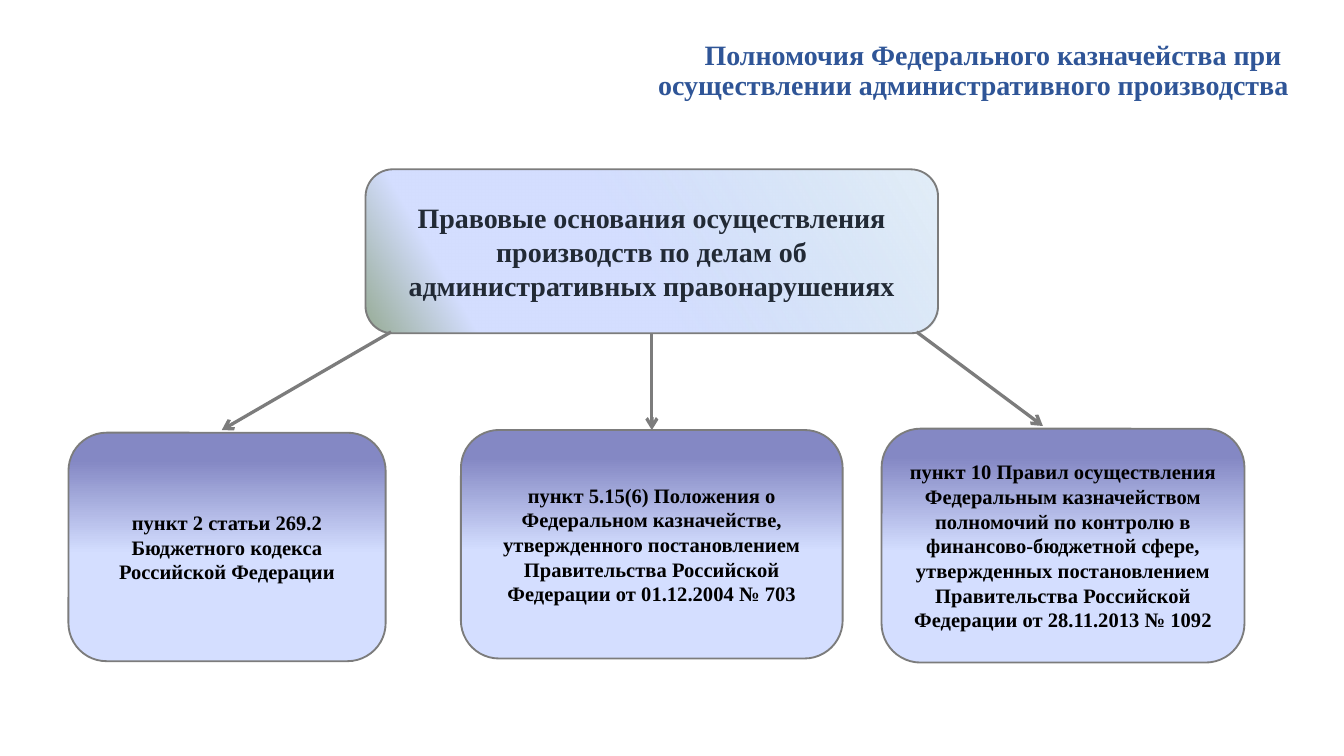
from lxml import etree
from pptx import Presentation
from pptx.dml.color import RGBColor
from pptx.enum.shapes import MSO_CONNECTOR, MSO_SHAPE
from pptx.enum.text import MSO_ANCHOR, PP_ALIGN
from pptx.oxml.ns import qn
from pptx.util import Inches, Pt

ROUND = MSO_SHAPE.ROUNDED_RECTANGLE
LINE = MSO_CONNECTOR.STRAIGHT
MIDDLE = MSO_ANCHOR.MIDDLE
CENTER, RIGHT = PP_ALIGN.CENTER, PP_ALIGN.RIGHT

BLUE = RGBColor(0x2F, 0x55, 0x97)
DARK = RGBColor(0x22, 0x2A, 0x35)
BLACK = RGBColor(0, 0, 0)
GRAY = RGBColor(0x7C, 0x7C, 0x7C)
SKY = RGBColor(0xBD, 0xD7, 0xEE)
PALE = RGBColor(0xD4, 0xDE, 0xFF)
SAGE = RGBColor(0x96, 0xAB, 0x94)
VIOLET = RGBColor(0x84, 0x88, 0xC4)

TITLE = ("Полномочия Федерального казначейства при \n"
         "осуществлении административного производства")
ROOT = ("Правовые основания осуществления производств по делам "
        "об административных правонарушениях")
BASES = [
    ("пункт 2 статьи 269.2 Бюджетного кодекса Российской Федерации",
     (0.51, 3.22, 2.36, 1.7)),
    ("пункт 5.15(6) Положения о Федеральном казначействе, утвержденного "
     "постановлением Правительства Российской Федерации от 01.12.2004 № 703",
     (3.43, 3.2, 2.84, 1.7)),
    ("пункт 10 Правил осуществления Федеральным казначейством полномочий "
     "по контролю в финансово-бюджетной сфере, утвержденных постановлением "
     "Правительства Российской Федерации от 28.11.2013 № 1092",
     (6.56, 3.19, 2.7, 1.74)),
]
ARROWS = [(2.91, 2.47, 1.65, 3.2), (4.85, 2.48, 4.85, 3.2),
          (6.82, 2.47, 7.76, 3.17)]
ROOT_FILL = (150, [(0, SKY, 42), (53, PALE, 100), (83, PALE, 100),
                   (100, SAGE, 100)])
BASE_FILL = (90, [(12, VIOLET, 100), (53, PALE, 100), (83, PALE, 100)])


def write(shape, text, size, color, align):
    frame = shape.text_frame
    looks = {"word_wrap": True, "vertical_anchor": MIDDLE,
             "margin_left": Inches(0.07), "margin_right": Inches(0.07),
             "margin_top": Inches(0.04), "margin_bottom": Inches(0.04)}
    for name, value in looks.items():
        setattr(frame, name, value)
    para = frame.paragraphs[0]
    para.text = text
    para.alignment = align
    for run in para.runs:
        font = run.font
        for name, value in {"name": "Times New Roman", "size": Pt(size),
                            "bold": True}.items():
            setattr(font, name, value)
        font.color.rgb = color
    return para


def shade(shape, angle, stops):
    shape.fill.gradient()
    grad = shape.fill._xPr.find(qn("a:gradFill"))
    for child in list(grad):
        grad.remove(child)
    group = etree.SubElement(grad, qn("a:gsLst"))
    for pos, color, alpha in stops:
        stop = etree.SubElement(group, qn("a:gs"), pos=str(pos * 1000))
        tint = etree.SubElement(stop, qn("a:srgbClr"), val=str(color))
        if alpha < 100:
            etree.SubElement(tint, qn("a:alpha"), val=str(alpha * 1000))
    etree.SubElement(grad, qn("a:lin"), ang=str(angle * 60000), scaled="0")


def add_box(slide, text, place, size, color, fill):
    box = slide.shapes.add_shape(ROUND, *map(Inches, place))
    box.shadow.inherit = False
    shade(box, *fill)
    box.line.color.rgb = GRAY
    box.line.width = Pt(1)
    write(box, text, size, color, CENTER)
    return box


def add_arrow(slide, ends):
    arrow = slide.shapes.add_connector(LINE, *map(Inches, ends))
    arrow.line.color.rgb = GRAY
    arrow.line.width = Pt(1.75)
    etree.SubElement(arrow.line._get_or_add_ln(), qn("a:tailEnd"), type="arrow")
    etree.SubElement(arrow._element.spPr, qn("a:effectLst"))
    return arrow


def main():
    deck = Presentation()
    deck.slide_width = Inches(10)
    deck.slide_height = deck.slide_width * 9 // 16
    slide = deck.slides.add_slide(deck.slide_layouts[6])

    title = slide.shapes.add_textbox(*map(Inches, (1.94, 0.17, 7.72, 0.72)))
    write(title, TITLE, 15, BLUE, RIGHT).line_spacing = 0.9

    root = add_box(slide, ROOT, (2.72, 1.26, 4.26, 1.22), 15, DARK, ROOT_FILL)
    arrows = [add_arrow(slide, ends) for ends in ARROWS]
    boxes = [add_box(slide, text, place, 11, BLACK, BASE_FILL)
             for text, place in BASES]
    arrows[1].begin_connect(root, 2)
    arrows[1].end_connect(boxes[1], 0)

    deck.save("out.pptx")


if __name__ == "__main__":
    main()
